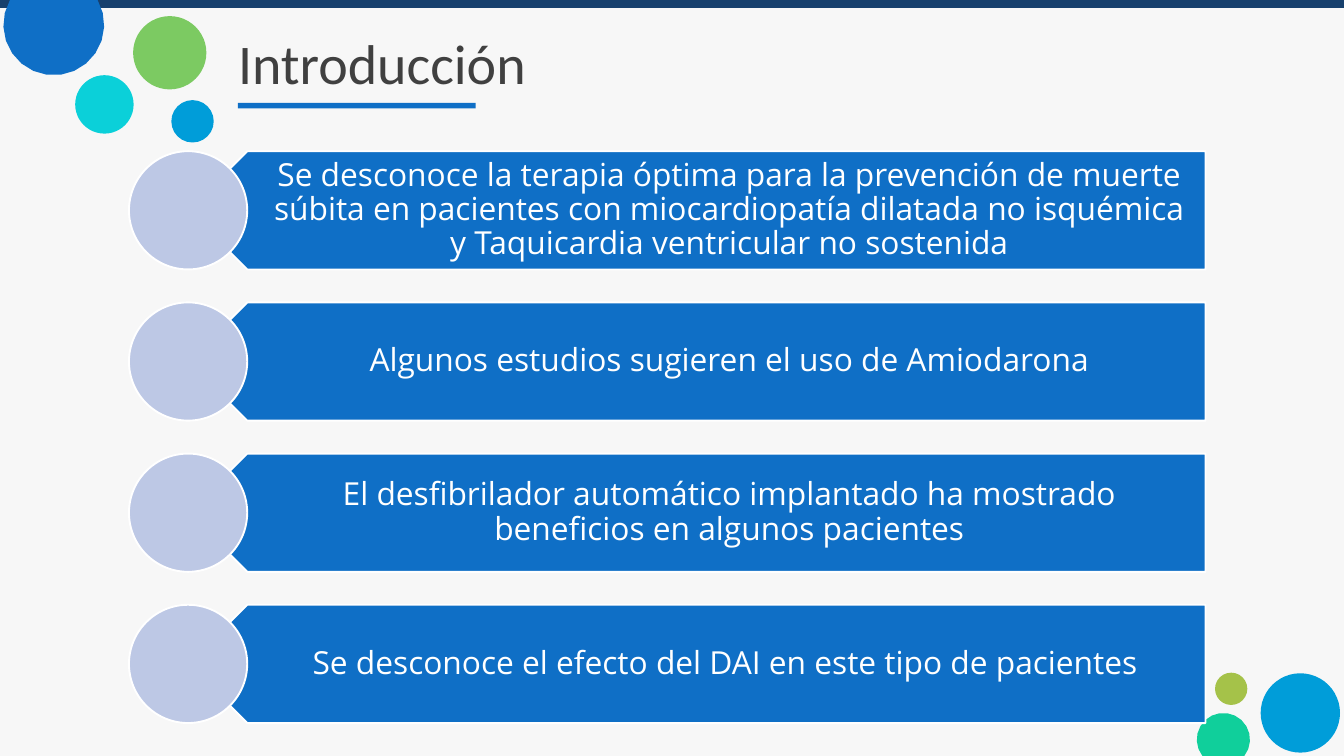
from math import asin, cos, pi, sin

from pptx import Presentation
from pptx.dml.color import RGBColor
from pptx.enum.shapes import MSO_SHAPE
from pptx.enum.text import MSO_ANCHOR, PP_ALIGN
from pptx.util import Pt

COLORS = {
    "background": "F7F7F7",
    "navy": "17406D",
    "blue": "0F6FC6",
    "sky": "009DD9",
    "cyan": "0BD0D9",
    "green": "7CCA62",
    "olive": "A5C249",
    "mint": "10CF9B",
    "lavender": "BDC8E5",
    "title": "404040",
    "white": "FFFFFF",
}
WIDTH, HEIGHT = 1440, 810


def paint(shape, fill, line=None):
    shape.shadow.inherit = False
    shape.fill.solid()
    shape.fill.fore_color.rgb = RGBColor.from_string(COLORS[fill])
    if line:
        shape.line.color.rgb = RGBColor.from_string(COLORS[line])
        shape.line.width = Pt(2)
    else:
        shape.line.fill.background()


def write_text(shape, text, font, size, color, align, margins, spacing=1.0):
    frame = shape.text_frame
    frame.word_wrap = True
    frame.vertical_anchor = MSO_ANCHOR.MIDDLE
    frame.margin_left, frame.margin_top, frame.margin_right, frame.margin_bottom = map(Pt, margins)
    paragraph = frame.paragraphs[0]
    paragraph.alignment = align
    paragraph.line_spacing = spacing
    run = paragraph.add_run()
    run.text = text
    run.font.name = font
    run.font.size = Pt(size)
    run.font.color.rgb = RGBColor.from_string(COLORS[color])


presentation = Presentation()
presentation.slide_width, presentation.slide_height = Pt(WIDTH), Pt(HEIGHT)
slide = presentation.slides.add_slide(presentation.slide_layouts[5])
slide.background.fill.solid()
slide.background.fill.fore_color.rgb = RGBColor.from_string(COLORS["background"])
shapes = slide.shapes

title = shapes.title
title.left, title.top, title.width, title.height = Pt(242), Pt(19.5), Pt(1130), Pt(95)
write_text(title, "Introducción", font="Calibri", size=60, color="title",
           align=PP_ALIGN.LEFT, margins=(13, 6.5, 13, 6.5))

bars = [(0, 0, WIDTH, 8.6, "navy"), (254.9, 110.2, 254.9, 5.8, "blue")]
for left, top, width, height, color in bars:
    bar = shapes.add_shape(MSO_SHAPE.RECTANGLE, Pt(left), Pt(top), Pt(width), Pt(height))
    paint(bar, color)

bubbles = [
    (183.6, 107.3, 45.4, "sky"),
    (80.6, 80.6, 62.6, "cyan"),
    (142.6, 17.3, 78.5, "green"),
    (1301.8, 720.7, 34.6, "olive"),
    (1350.7, 721.4, 85, "sky"),
]
for left, top, diameter, color in bubbles:
    bubble = shapes.add_shape(MSO_SHAPE.OVAL, Pt(left), Pt(top), Pt(diameter), Pt(diameter))
    paint(bubble, color)

STEPS = 15
top_cut = asin(-26.6 / 54)
bottom_cut = asin((HEIGHT - 792.4) / 28.5)
cut_bubbles = [
    (57.6, 26.6, 54, top_cut, pi - top_cut, "blue"),
    (1310.8, 792.4, 28.5, pi - bottom_cut, 2 * pi + bottom_cut, "mint"),
]
for center_x, center_y, radius, start, end, color in cut_bubbles:
    angles = [start + (end - start) * step / STEPS for step in range(STEPS + 1)]
    points = [(Pt(center_x + radius * cos(angle)), Pt(center_y + radius * sin(angle)))
              for angle in angles]
    builder = shapes.build_freeform(*points[0], scale=1.0)
    builder.add_line_segments(points[1:], close=True)
    paint(builder.convert_to_shape(), color)

statements = [
    "Se desconoce la terapia óptima para la prevención de muerte súbita en pacientes con "
    "miocardiopatía dilatada no isquémica y Taquicardia ventricular no sostenida",
    "Algunos estudios sugieren el uso de Amiodarona",
    "El desfibrilador automático implantado ha mostrado beneficios en algunos pacientes",
    "Se desconoce el efecto del DAI en este tipo de pacientes ",
]
ROW_TOP, ROW_PITCH, ROW_HEIGHT = 162, 162, 126.7
for index, statement in enumerate(statements):
    top = Pt(ROW_TOP + index * ROW_PITCH)
    height = Pt(ROW_HEIGHT)
    arrow = shapes.add_shape(MSO_SHAPE.PENTAGON, Pt(201.6), top, Pt(1090), height)
    arrow.rotation = 180
    paint(arrow, "blue", line="white")
    label = shapes.add_textbox(Pt(233.3), top, Pt(1059), height)
    write_text(label, statement, font="Open Sans", size=34, color="white",
               align=PP_ALIGN.CENTER, margins=(56, 10, 18.7, 10), spacing=0.9)
    circle = shapes.add_shape(MSO_SHAPE.OVAL, Pt(138.2), top, height, height)
    paint(circle, "lavender", line="white")

presentation.save("out.pptx")
